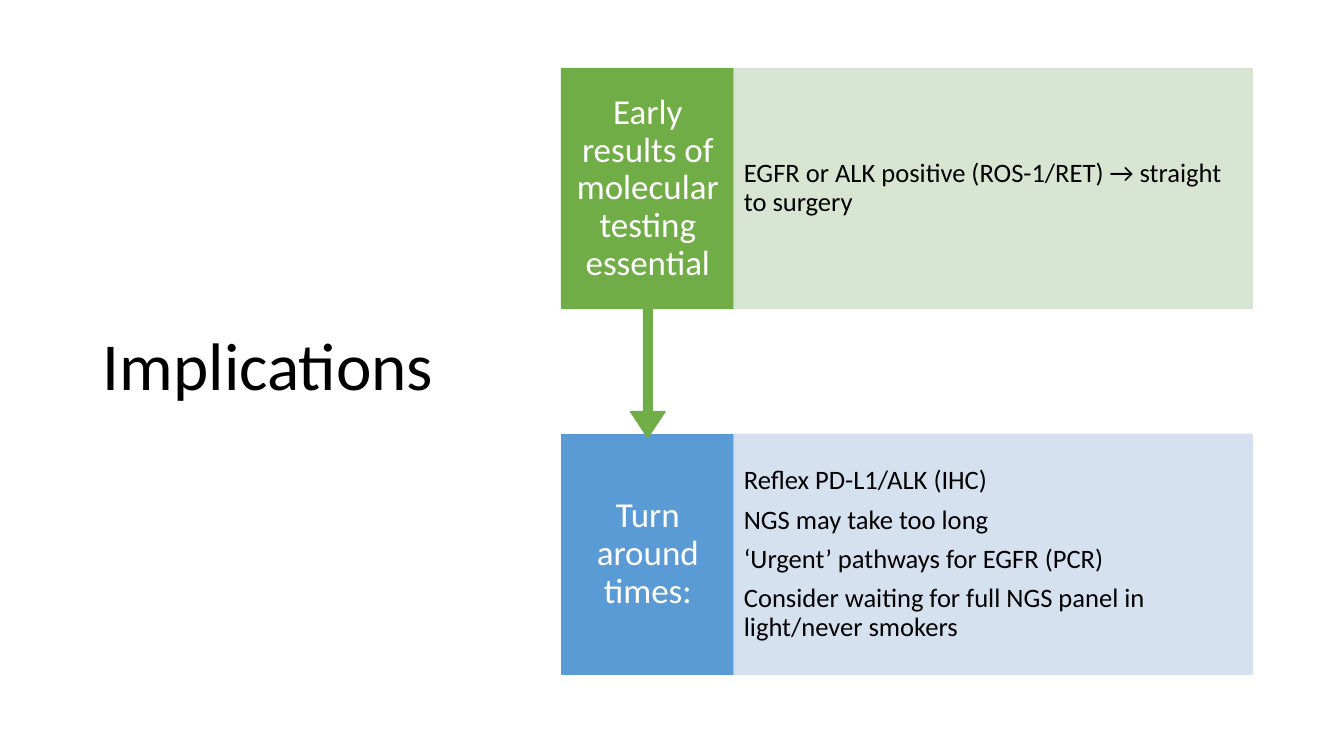
from lxml.etree import SubElement
from pptx import Presentation
from pptx.dml.color import RGBColor as RGB
from pptx.enum.shapes import MSO_SHAPE as Kind
from pptx.enum.text import MSO_ANCHOR as Anchor, MSO_AUTO_SIZE as Auto, PP_ALIGN as Align
from pptx.oxml.ns import qn
from pptx.util import Inches, Pt

HUES = {"ink": "000000", "white": "FFFFFF", "blue": "5B9BD5", "sky": "D2DEEF",
        "green": "70AD47", "mint": "D5E3CF"}
LEFT, SPLIT, WIDE, TALL = 5.57, 1.71, 5.14, 2.38
SHARE = 0.65
ROWS = [
    {"top": 4.31, "hue": "blue", "tint": "sky", "arrow": False,
     "head": "Turn around times:",
     "notes": ["Reflex PD-L1/ALK (IHC)", "NGS may take too long",
               "‘Urgent’ pathways for EGFR (PCR)",
               "Consider waiting for full NGS panel in light/never smokers"]},
    {"top": 0.68, "hue": "green", "tint": "mint", "arrow": True,
     "head": "Early results of molecular testing essential",
     "notes": ["EGFR or ALK positive (ROS-1/RET) → straight to surgery"]},
]


class Deck:
    """Holds the style and the current slide, and draws its parts."""

    def __init__(self):
        self.show = Presentation()
        self.show.slide_width, self.show.slide_height = Inches(13.33), Inches(7.5)
        self.slide = self.show.slides.add_slide(self.show.slide_layouts[5])
        self.font = "Calibri"

    def put(self, item, form):
        for key, val in form.items():
            setattr(item, key, val)

    def label(self, shape, lines, size, hue, align, pad=(0.1, 0.05), gap=0):
        frame = shape.text_frame
        side, edge = map(Inches, pad)
        self.put(frame, {"word_wrap": True, "auto_size": Auto.NONE,
                         "vertical_anchor": Anchor.MIDDLE,
                         "margin_left": side, "margin_right": side,
                         "margin_top": edge, "margin_bottom": edge})
        frame.text = "\n".join(lines)
        for para in frame.paragraphs:
            self.put(para, {"alignment": align, "line_spacing": 0.9,
                            "space_before": Pt(0), "space_after": Pt(gap)})
            for run in para.runs:
                self.put(run.font, {"name": self.font, "size": Pt(size)})
                run.font.color.rgb = RGB.from_string(HUES[hue])

    def title(self, text, box):
        shape = self.slide.shapes.title
        self.put(shape, dict(zip(("left", "top", "width", "height"), map(Inches, box))))
        self.label(shape, [text], 48, "ink", Align.LEFT)

    def block(self, kind, box, hue, clear=False):
        shape = self.slide.shapes.add_shape(kind, *map(Inches, box))
        shape.shadow.inherit = False
        shape.line.width = Pt(1)
        for fill in (shape.fill, shape.line.fill):
            fill.solid()
            fill.fore_color.rgb = RGB.from_string(HUES[hue])
        if clear:
            for tint in shape.element.iter(qn("a:srgbClr")):
                SubElement(tint, qn("a:alpha"), val="90000")
        return shape

    def row(self, top, hue, tint, arrow, head, notes):
        kind = Kind.DOWN_ARROW_CALLOUT if arrow else Kind.RECTANGLE
        high = TALL / SHARE if arrow else TALL
        tag = self.block(kind, (LEFT, top, SPLIT, high), hue)
        if arrow:
            for spot, val in enumerate((0.05, 0.1, 0.15, SHARE)):
                tag.adjustments[spot] = val
        self.label(tag, [head], 25, "white", Align.CENTER, (0.12, 0.19))
        panel = self.block(Kind.RECTANGLE, (LEFT + SPLIT, top, WIDE, TALL), tint, True)
        self.label(panel, notes, 19, "ink", Align.LEFT, (0.1, 0.26), 7.5)


def main():
    deck = Deck()
    deck.title("Implications", (0.92, 0.61, 3.69, 6.09))
    for row in ROWS:
        deck.row(**row)
    deck.show.save("out.pptx")


if __name__ == "__main__":
    main()
